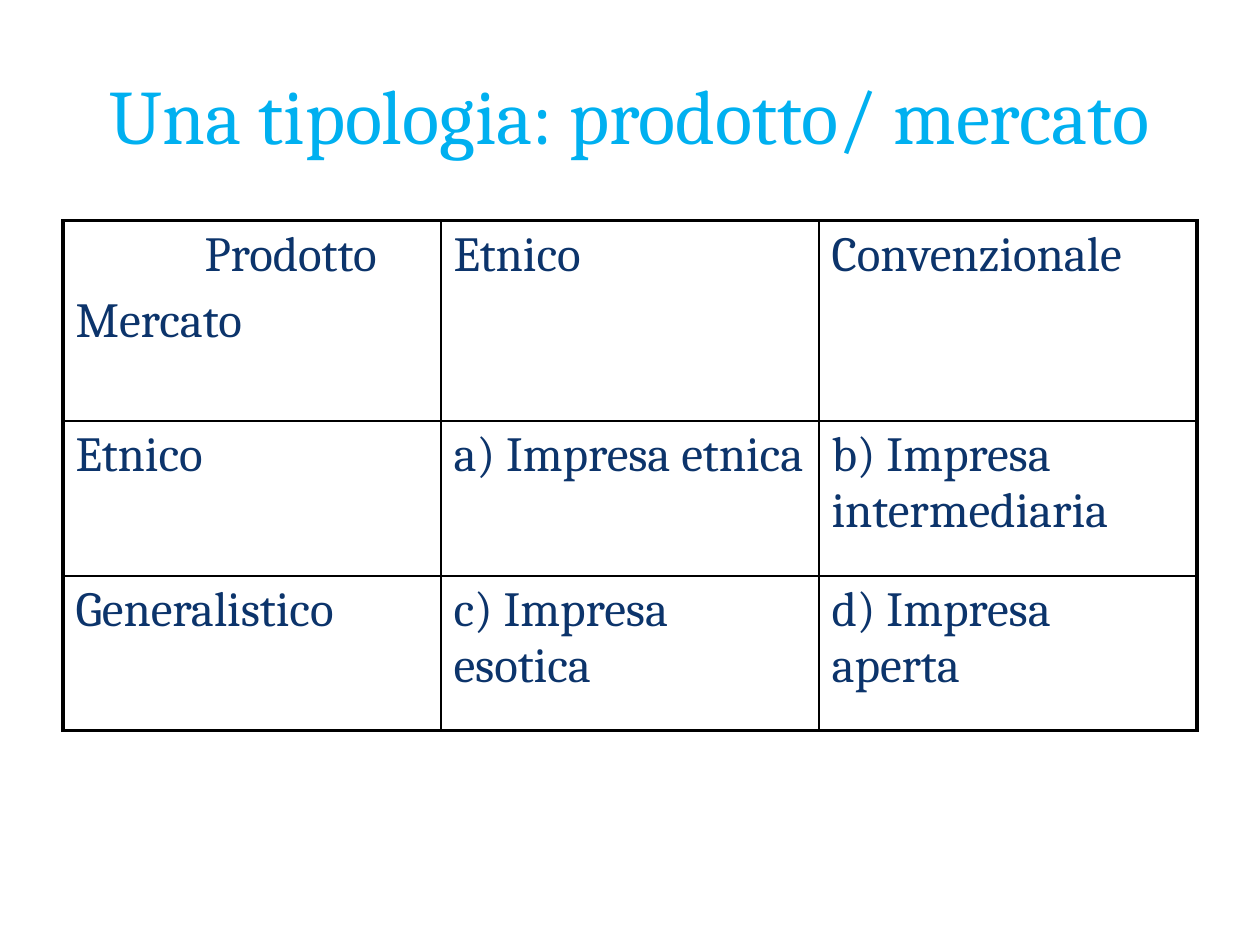
from dataclasses import dataclass

from lxml.etree import SubElement
from pptx import Presentation
from pptx.dml.color import RGBColor
from pptx.enum.text import MSO_ANCHOR, PP_ALIGN
from pptx.oxml.ns import qn
from pptx.util import Cm, Pt


@dataclass(frozen=True)
class Theme:
    font: str = "Cambria"
    title: str = "00B0F0"
    text: str = "0C346B"
    line: str = "000000"
    head: float = 44
    body: float = 28
    gap: float = 5.6
    thick: float = 2.25
    thin: float = 1


class Deck:
    def __init__(self, theme):
        self.theme = theme
        self.prs = Presentation()
        self.prs.slide_width, self.prs.slide_height = Cm(25.4), Cm(19.05)
        self.slide = self.prs.slides.add_slide(self.prs.slide_layouts[5])

    def add_text(self, para, text, size, color):
        run = para.add_run()
        run.text = text
        run.font.name = self.theme.font
        run.font.size = Pt(size)
        run.font.color.rgb = RGBColor.from_string(color)

    def title(self, text, left, top, width, height):
        box = self.slide.shapes.title
        box.left, box.top, box.width, box.height = map(Cm, (left, top, width, height))
        frame = box.text_frame
        frame.word_wrap = True
        frame.vertical_anchor = MSO_ANCHOR.MIDDLE
        para = frame.paragraphs[0]
        para.alignment = PP_ALIGN.CENTER
        self.add_text(para, text, self.theme.head, self.theme.title)

    def border(self, cell, widths):
        props = cell._tc.get_or_add_tcPr()
        for index, (side, width) in enumerate(widths.items()):
            line = SubElement(props, qn(f"a:ln{side}"), w=str(int(Pt(width))))
            fill = SubElement(line, qn("a:solidFill"))
            SubElement(fill, qn("a:srgbClr"), val=self.theme.line)
            props.insert(index, line)  # borders come before the fill

    def cell(self, cell, lines):
        cell.fill.background()
        frame = cell.text_frame
        for index, (text, indent) in enumerate(lines):
            para = frame.add_paragraph() if index else frame.paragraphs[0]
            if index:
                para.space_before = Pt(self.theme.gap)
            if indent:
                para._p.get_or_add_pPr().set("indent", str(int(Cm(indent))))
            self.add_text(para, text, self.theme.body, self.theme.text)

    def table(self, rows, left, top, width, heights):
        count, cols = len(rows), len(rows[0])
        frame = self.slide.shapes.add_table(
            count, cols, Cm(left), Cm(top), Cm(width), Cm(sum(heights)))
        grid = frame.table
        grid.first_row = grid.horz_banding = False
        for col in grid.columns:
            col.width = Cm(width / cols)
        for r, row in enumerate(rows):
            grid.rows[r].height = Cm(heights[r])
            for c, lines in enumerate(row):
                cell = grid.cell(r, c)
                self.cell(cell, lines)
                # Outer edges are thick, inner ones thin
                edges = {"L": c == 0, "R": c == cols - 1,
                         "T": r == 0, "B": r == count - 1}
                self.border(cell, {
                    side: self.theme.thick if outer else self.theme.thin
                    for side, outer in edges.items()})


def main():
    deck = Deck(Theme())

    # Heading
    deck.title("Una tipologia: prodotto/ mercato", 1.27, 1.07, 22.86, 2.46)

    # Product by market grid: each cell lists (text, first-line indent)
    rows = [
        [[("Prodotto", 2.6), ("Mercato", 0)], [("Etnico", 0)], [("Convenzionale", 0)]],
        [[("Etnico", 0)], [("a) Impresa etnica", 0)], [("b) Impresa intermediaria", 0)]],
        [[("Generalistico", 0)], [("c) Impresa esotica", 0)], [("d) Impresa aperta", 0)]],
    ]
    deck.table(rows, 1.27, 4.45, 22.86, [4.04, 3.12, 3.12])

    deck.prs.save("out.pptx")


if __name__ == "__main__":
    main()
